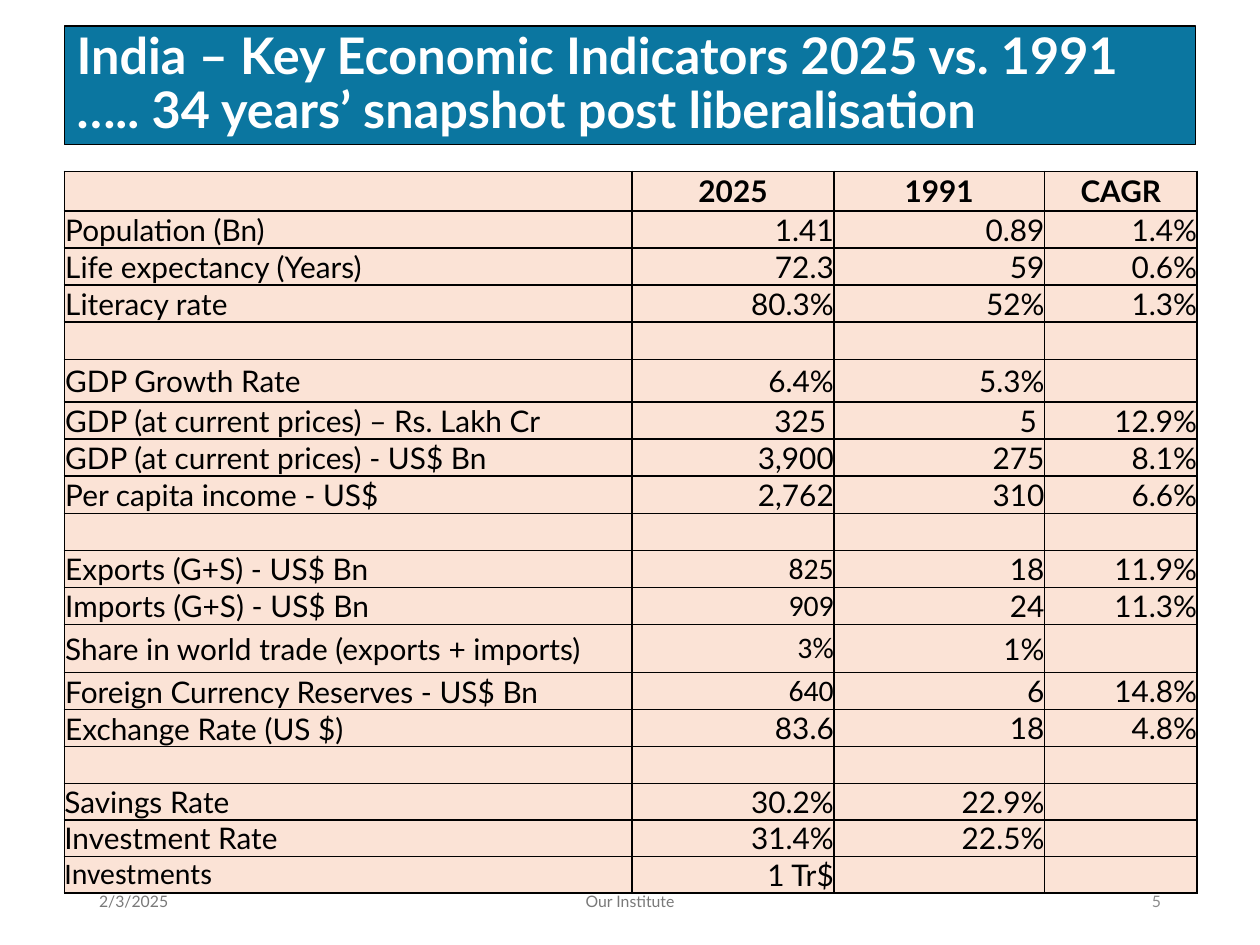
from lxml import etree
from pptx import Presentation
from pptx.dml.color import RGBColor
from pptx.enum import shapes, text
from pptx.oxml import ns
from pptx.util import Pt

WHITE = RGBColor(0xFF, 0xFF, 0xFF)
BLACK = RGBColor(0, 0, 0)
BLUE = RGBColor(0x0B, 0x76, 0xA0)
PEACH = RGBColor(0xFB, 0xE3, 0xD6)
GREY = RGBColor(0x79, 0x79, 0x79)
LIGHT_GREY = RGBColor(0x8C, 0x8C, 0x8C)
LEFT, CENTER, RIGHT = text.PP_ALIGN.LEFT, text.PP_ALIGN.CENTER, text.PP_ALIGN.RIGHT

TITLE = "India – Key Economic Indicators 2025 vs. 1991\v….. 34 years’ snapshot post liberalisation"
INDICATORS = [
    ("", "2025", "1991", "CAGR"),
    ("Population (Bn)", "1.41", "0.89", "1.4%"),
    ("Life expectancy (Years)", "72.3", "59", "0.6%"),
    ("Literacy rate", "80.3%", "52%", "1.3%"),
    ("", "", "", ""),
    ("GDP Growth Rate", "6.4%", "5.3%", ""),
    ("GDP (at current prices) – Rs. Lakh Cr", "325 ", "5 ", "12.9%"),
    ("GDP (at current prices) - US$ Bn", "3,900", "275", "8.1%"),
    ("Per capita income - US$", "2,762", "310", "6.6%"),
    ("", "", "", ""),
    ("Exports (G+S) - US$ Bn", "825", "18", "11.9%"),
    ("Imports (G+S) - US$ Bn", "909", "24", "11.3%"),
    ("Share in world trade (exports + imports)", "3%", "1%", ""),
    ("Foreign Currency Reserves - US$ Bn", "640", "6", "14.8%"),
    ("Exchange Rate (US $)", "83.6", "18", "4.8%"),
    ("", "", "", ""),
    ("Savings Rate", "30.2%", "22.9%", ""),
    ("Investment Rate", "31.4%", "22.5%", ""),
    ("Investments", "1 Tr$", "", ""),
]
CALIBRI_CELLS = {"825", "909", "3%", "640", "Investments"}
COLUMN_WIDTHS = [324.5, 115.2, 120.4, 87.2]
ROW_HEIGHT = 21.2
SPECIAL_HEIGHTS = {0: 22.7, 5: 24.5, 12: 27.5, 16: 20.8, 17: 20.8, 18: 20.8}
FIRST_SAVINGS_ROW = 16
FOOTER = [
    ("2/3/2025", 49.5, 162, LEFT, GREY),
    ("Our Institute", 238.5, 243, CENTER, GREY),
    ("5", 508.5, 162, RIGHT, LIGHT_GREY),
]


def assign(target, values):
    for name, value in values.items():
        setattr(target, name, value)


def write(frame, words, align, color, **font):
    frame.text = words
    frame.vertical_anchor = text.MSO_ANCHOR.MIDDLE
    para = frame.paragraphs[0]
    para.alignment = align
    for span in para.runs:
        assign(span.font, font)
        span.font.color.rgb = color
    return para


def add_borders(cell):
    properties = cell._tc.get_or_add_tcPr()
    for index, side in enumerate(("lnL", "lnR", "lnT", "lnB")):
        line = etree.Element(ns.qn("a:" + side), w=str(Pt(1)))
        fill = etree.SubElement(line, ns.qn("a:solidFill"))
        etree.SubElement(fill, ns.qn("a:srgbClr"), val=str(BLACK))
        properties.insert(index, line)


def add_title(page):
    box = page.shapes.add_shape(shapes.MSO_SHAPE.RECTANGLE, Pt(36.7), Pt(14.8), Pt(646.6), Pt(67.9))
    box.shadow.inherit = False
    box.fill.solid()
    box.fill.fore_color.rgb = BLUE
    box.line.color.rgb = BLACK
    box.line.width = Pt(0.75)
    para = write(box.text_frame, TITLE, LEFT, WHITE, name="Lato", size=Pt(28.8), bold=True)
    para.line_spacing = 0.9


def add_indicators(page):
    heights = [SPECIAL_HEIGHTS.get(row, ROW_HEIGHT) for row in range(len(INDICATORS))]
    table = page.shapes.add_table(
        len(heights), len(COLUMN_WIDTHS), Pt(36.8), Pt(97.9),
        Pt(sum(COLUMN_WIDTHS)), Pt(sum(heights))).table
    for column, width in zip(table.columns, COLUMN_WIDTHS):
        column.width = Pt(width)
    for row, (height, entries) in enumerate(zip(heights, INDICATORS)):
        table.rows[row].height = Pt(height)
        for column, words in enumerate(entries):
            cell = table.cell(row, column)
            inset = Pt(0.5) if column == 0 and 0 < row < FIRST_SAVINGS_ROW else 0
            assign(cell, {"margin_left": inset, "margin_top": inset, "margin_right": inset,
                          "margin_bottom": 0, "vertical_anchor": text.MSO_ANCHOR.MIDDLE})
            cell.fill.solid()
            cell.fill.fore_color.rgb = PEACH
            add_borders(cell)
            para = cell.text_frame.paragraphs[0]
            if not words:
                etree.SubElement(para._p, ns.qn("a:endParaRPr"), sz="1200")
                continue
            para.alignment = LEFT if column == 0 else CENTER if row == 0 else RIGHT
            span = para.add_run()
            span.text = words
            assign(span.font, {"name": "Calibri" if words in CALIBRI_CELLS else "Lato",
                               "size": Pt(17), "bold": row == 0})
            span.font.color.rgb = BLACK


def add_footer(page):
    for words, left, width, align, color in FOOTER:
        box = page.shapes.add_textbox(Pt(left), Pt(500.5), Pt(width), Pt(28.8))
        box.text_frame.word_wrap = True
        write(box.text_frame, words, align, color, name="Lato", size=Pt(9))


def main():
    deck = Presentation()
    assign(deck, {"slide_width": Pt(720), "slide_height": Pt(540)})
    page = deck.slides.add_slide(deck.slide_layouts[6])
    add_title(page)
    add_indicators(page)
    add_footer(page)
    deck.save("out.pptx")


if __name__ == "__main__":
    main()
